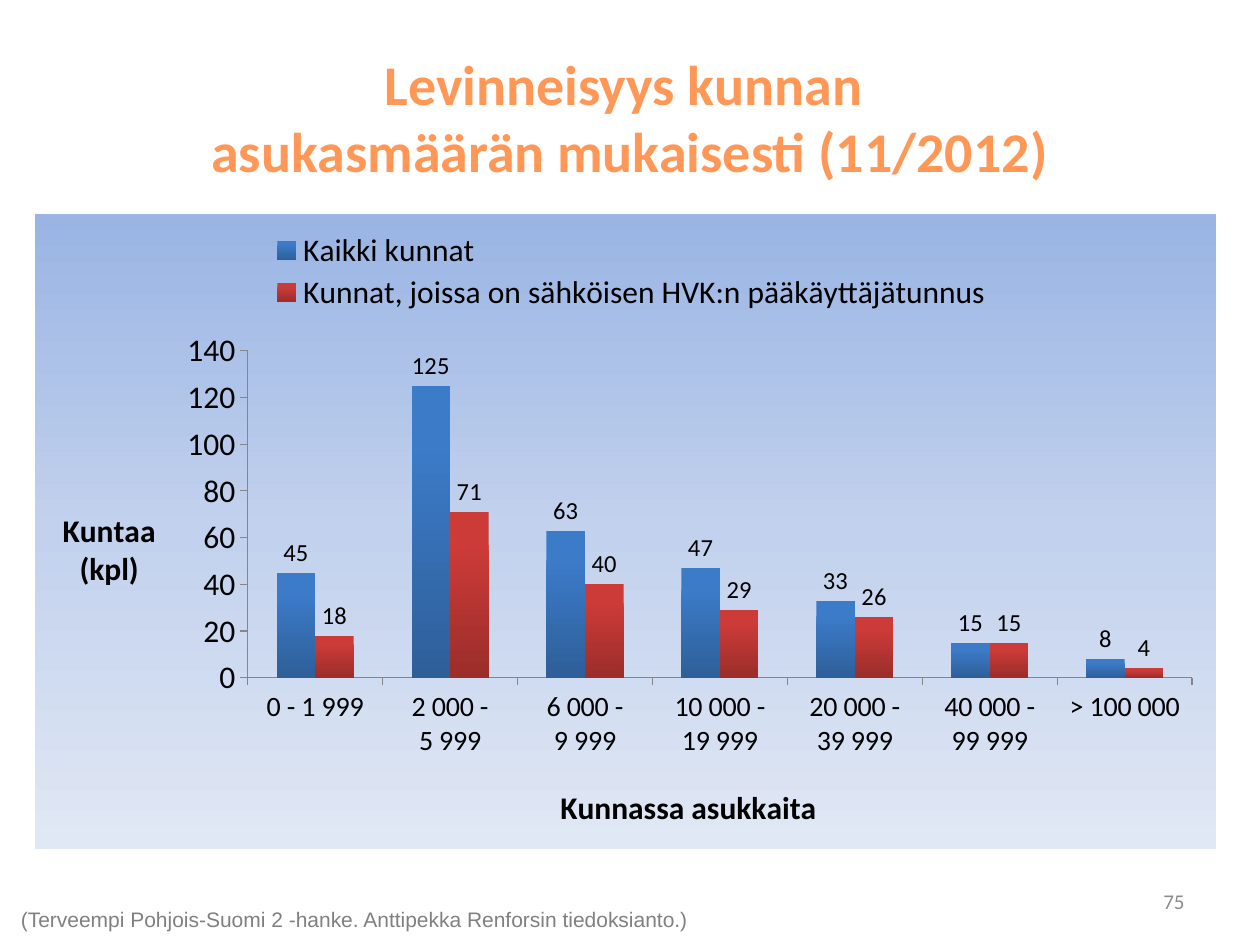
from pptx import Presentation
from pptx.chart.data import CategoryChartData
from pptx.dml.color import RGBColor
from pptx.enum.chart import XL_CHART_TYPE, XL_LABEL_POSITION, XL_LEGEND_POSITION, XL_TICK_MARK
from pptx.enum.text import MSO_ANCHOR, PP_ALIGN
from pptx.oxml import parse_xml
from pptx.oxml.ns import nsdecls, qn
from pptx.util import Cm, Pt

BLACK = RGBColor(0x00, 0x00, 0x00)
ORANGE = RGBColor(0xFF, 0x98, 0x56)
SOURCE_GRAY = RGBColor(0x80, 0x80, 0x80)
NUMBER_GRAY = RGBColor(0x8C, 0x8C, 0x8C)
AXIS_GRAY = RGBColor(0x86, 0x86, 0x86)
BLUE, DARK_BLUE = RGBColor(0x3C, 0x7B, 0xC8), RGBColor(0x2E, 0x5F, 0x99)
RED, DARK_RED = RGBColor(0xCC, 0x3B, 0x38), RGBColor(0x9B, 0x2D, 0x2A)
SKY = RGBColor(0x9A, 0xB5, 0xE4)
PALE_SKY = RGBColor(0xC2, 0xD1, 0xED)
MIST = RGBColor(0xE1, 0xE8, 0xF5)

CATEGORIES = ["0 - 1 999", "2 000 -\n5 999", "6 000 -\n9 999", "10 000 -\n19 999",
              "20 000 -\n39 999", "40 000 -\n99 999", "> 100 000"]
SERIES = [
    ("Kaikki kunnat", [45, 125, 63, 47, 33, 15, 8], BLUE, DARK_BLUE),
    ("Kunnat, joissa on sähköisen HVK:n pääkäyttäjätunnus",
     [18, 71, 40, 29, 26, 15, 4], RED, DARK_RED),
]


def style_font(font, size, color=BLACK, bold=False, name="Calibri"):
    font.name, font.size, font.bold = name, Pt(size), bold
    font.color.rgb = color


def add_text(page, box, text, align=PP_ALIGN.CENTER, anchor=MSO_ANCHOR.MIDDLE, **style):
    frame = page.shapes.add_textbox(*box).text_frame
    frame.word_wrap = True
    frame.vertical_anchor = anchor
    para = frame.paragraphs[0]
    para.text = text
    para.alignment = align
    for span in para.runs:
        style_font(span.font, **style)


def gradient_properties(*stops):
    """Shape properties with a top-to-bottom gradient of (percent, colour) stops."""
    marks = "".join(f'<a:gs pos="{percent * 1000}"><a:srgbClr val="{color}"/></a:gs>'
                    for percent, color in stops)
    return parse_xml(f'<c:spPr {nsdecls("c", "a")}><a:gradFill rotWithShape="1">'
                     f'<a:gsLst>{marks}</a:gsLst><a:lin ang="5400000" scaled="0"/>'
                     '</a:gradFill><a:ln><a:noFill/></a:ln></c:spPr>')


def place(element, after=None, inner=False, **fractions):
    """Give a chart part a manual layout in fractions of the chart size."""
    for old in element.findall(qn("c:layout")):
        element.remove(old)
    target = '<c:layoutTarget val="inner"/>' if inner else ""
    modes = "".join(f'<c:{key}Mode val="edge"/>' for key in "xy")
    values = "".join(f'<c:{key} val="{value}"/>' for key, value in fractions.items())
    layout = parse_xml(f'<c:layout {nsdecls("c")}><c:manualLayout>{target}{modes}{values}'
                       '</c:manualLayout></c:layout>')
    if after:
        element.find(qn(after)).addnext(layout)
    else:
        element.insert(0, layout)


def style_axis(axis, title, size):
    axis.has_major_gridlines = False
    axis.major_tick_mark = XL_TICK_MARK.OUTSIDE
    axis.minor_tick_mark = XL_TICK_MARK.NONE
    axis.format.line.color.rgb = AXIS_GRAY
    style_font(axis.tick_labels.font, size)
    frame = axis.axis_title.text_frame
    frame.text = title
    for para in frame.paragraphs:
        para.alignment = PP_ALIGN.CENTER
        for span in para.runs:
            style_font(span.font, 18, bold=True)


def add_population_chart(page, box):
    data = CategoryChartData()
    data.categories = CATEGORIES
    for name, values, *_ in SERIES:
        data.add_series(name, values)
    chart = page.shapes.add_chart(XL_CHART_TYPE.COLUMN_CLUSTERED, *box, data).chart
    style_font(chart.font, 18)
    chart.has_title = False
    chart.has_legend = True
    chart.legend.position = XL_LEGEND_POSITION.TOP
    chart.legend.include_in_layout = False
    style_font(chart.legend.font, 18)

    style_axis(chart.category_axis, "Kunnassa asukkaita", 16)
    style_axis(chart.value_axis, "Kuntaa\n(kpl)", 18)
    chart.value_axis.minimum_scale = 0
    chart.value_axis.maximum_scale = 140
    chart.value_axis.major_unit = 20

    plot = chart.plots[0]
    plot.gap_width, plot.overlap = 150, 0
    plot.vary_by_categories = False
    for series, (_, _, light, dark) in zip(plot.series, SERIES):
        series.invert_if_negative = False
        labels = series.data_labels
        labels.show_value = True
        labels.position = XL_LABEL_POSITION.OUTSIDE_END
        style_font(labels.font, 14)
        series._element.find(qn("c:tx")).addnext(
            gradient_properties((0, light), (20, light), (100, dark)))

    space = chart._chartSpace
    space.find(qn("c:chart")).addnext(
        gradient_properties((0, SKY), (50, PALE_SKY), (100, MIST)))
    place(space.xpath("//c:plotArea")[0], inner=True, x=0.18, y=0.215, w=0.8, h=0.515)
    place(space.xpath("//c:legend")[0], "c:legendPos", x=0.19, y=0.02, w=0.63, h=0.14)
    place(space.xpath("//c:catAx/c:title")[0], "c:tx", x=0.44, y=0.89)
    value_title = space.xpath("//c:valAx/c:title")[0]
    place(value_title, "c:tx", x=0.02, y=0.46)
    body = value_title.find(".//" + qn("a:bodyPr"))
    body.set("rot", "0")
    body.set("vert", "horz")


def build_slide(deck):
    page = deck.slides.add_slide(deck.slide_layouts[6])
    add_population_chart(page, (Cm(0.71), Cm(4.32), Cm(23.8), Cm(12.8)))
    add_text(page, (Cm(0), Cm(18.16), Cm(14.3), Cm(0.79)),
             "(Terveempi Pohjois-Suomi 2 -hanke. Anttipekka Renforsin tiedoksianto.)",
             anchor=MSO_ANCHOR.TOP, size=12, color=SOURCE_GRAY, name="Arial")
    add_text(page, (Cm(1.27), Cm(0.76), Cm(22.86), Cm(3.18)),
             "Levinneisyys kunnan \nasukasmäärän mukaisesti (11/2012)",
             size=32, color=ORANGE, bold=True)
    add_text(page, (Cm(18.21), Cm(17.65), Cm(5.92), Cm(1.02)), "75",
             align=PP_ALIGN.RIGHT, size=12, color=NUMBER_GRAY)


def main():
    deck = Presentation()
    deck.slide_width, deck.slide_height = Cm(25.4), Cm(19.05)
    build_slide(deck)
    deck.save("out.pptx")


if __name__ == "__main__":
    main()
